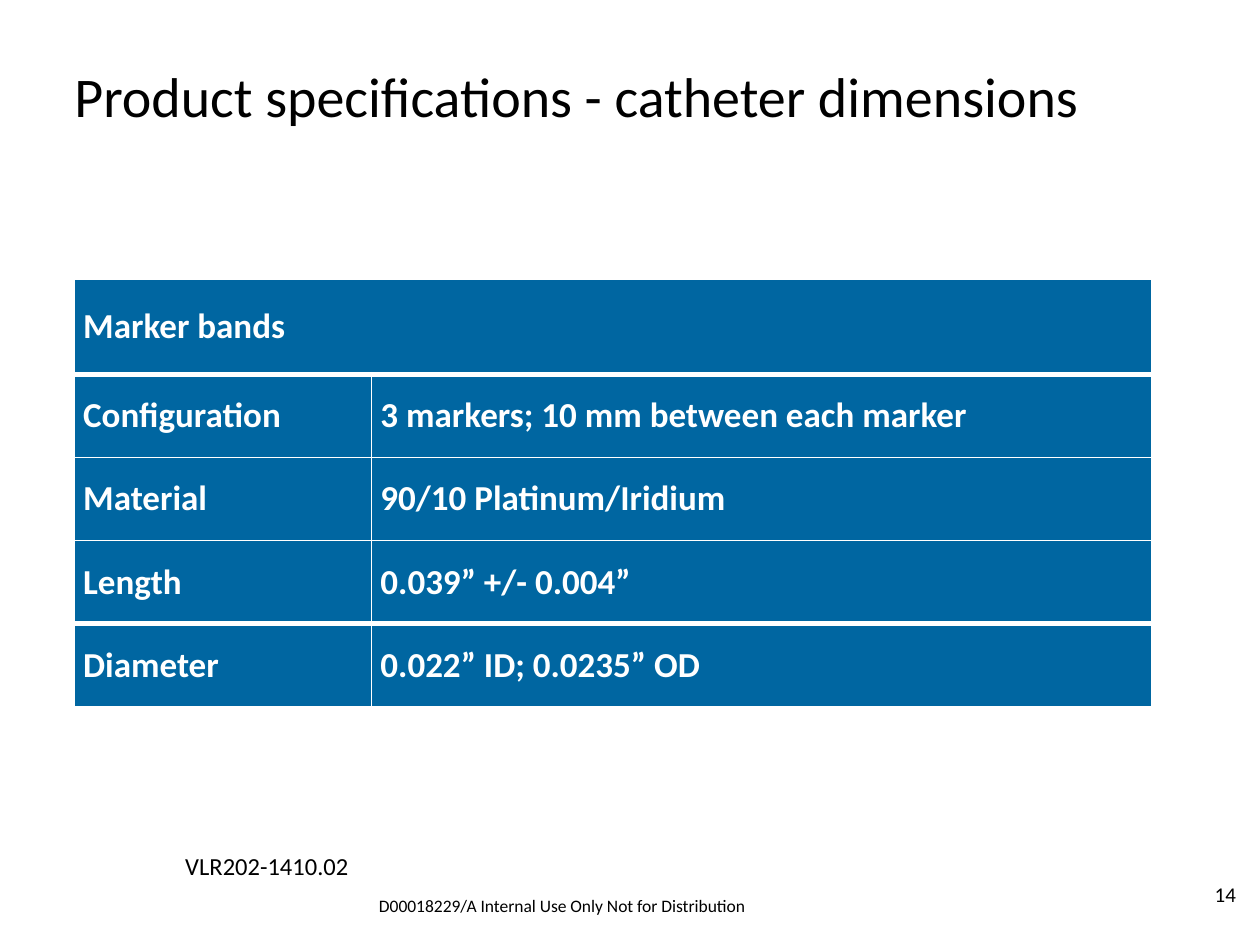
from lxml.etree import SubElement
from pptx import Presentation
from pptx.dml.color import RGBColor
from pptx.enum.text import MSO_ANCHOR, PP_ALIGN
from pptx.oxml.ns import qn
from pptx.util import Inches, Pt

TITLE = "Product specifications - catheter dimensions"
HEADING = "Marker bands"
SPECIFICATIONS = [
    ("Configuration", "3 markers; 10 mm between each marker"),
    ("Material", "90/10 Platinum/Iridium"),
    ("Length", "0.039” +/- 0.004”"),
    ("Diameter", "0.022” ID; 0.0235” OD"),
]
FOOTERS = [
    ("14", (9.64, 7, 0.29, 0.22), 12, PP_ALIGN.LEFT),
    ("VLR202-1410.02", (1.47, 6.75, 5.88, 0.35), 14, PP_ALIGN.LEFT),
    ("D00018229/A Internal Use Only Not for Distribution",
     (2.7, 7.1, 3.52, 0.16), 10, PP_ALIGN.CENTER),
]
BLACK, WHITE, BLUE = "000000", "FFFFFF", "0066A1"
MARGIN = 0.59
COLUMN_WIDTHS = (2.36, 6.19)
HEADING_HEIGHT, ROW_HEIGHT = 0.75, 0.66
THIN, THICK = 1, 3


def color(value):
    """Turn a hex string into a colour."""
    return RGBColor.from_string(value)


def write(frame, text, size, ink, align=PP_ALIGN.LEFT, bold=False):
    """Put one formatted paragraph in a text frame."""
    frame.text = text
    paragraph = frame.paragraphs[0]
    paragraph.alignment = align
    font = paragraph.font
    font.name, font.size, font.bold = "Calibri", Pt(size), bold
    font.color.rgb = color(ink)


def fit(frame):
    """Remove the insets, wrap the text and start it at the top."""
    frame.margin_left = frame.margin_right = frame.margin_top = frame.margin_bottom = 0
    frame.word_wrap = True
    frame.vertical_anchor = MSO_ANCHOR.TOP


def border(cell, top, bottom):
    """Draw white lines on the four sides of a cell."""
    properties = cell._tc.get_or_add_tcPr()
    sides = {"L": THIN, "R": THIN, "T": top, "B": bottom}
    for position, (side, width) in enumerate(sides.items()):
        line = SubElement(properties, qn(f"a:ln{side}"), w=str(Pt(width)))
        SubElement(SubElement(line, qn("a:solidFill")), qn("a:srgbClr"), val=WHITE)
        properties.insert(position, line)


def add_specifications(slide):
    """Build the table of marker band specifications."""
    rows = [(HEADING, "")] + SPECIFICATIONS
    heights = [HEADING_HEIGHT] + [ROW_HEIGHT] * len(SPECIFICATIONS)
    table = slide.shapes.add_table(
        len(rows), len(COLUMN_WIDTHS), Inches(MARGIN), Inches(2.22),
        Inches(sum(COLUMN_WIDTHS)), Inches(sum(heights))).table
    for column, width in zip(table.columns, COLUMN_WIDTHS):
        column.width = Inches(width)
    edges = [THIN, THICK] + [THIN] * (len(rows) - 3) + [THICK, THIN]
    for row, (texts, height) in enumerate(zip(rows, heights)):
        table.rows[row].height = Inches(height)
        for column, text in enumerate(texts):
            cell = table.cell(row, column)
            cell.margin_left = cell.margin_right = Inches(0.07)
            cell.margin_top = cell.margin_bottom = 0
            cell.vertical_anchor = MSO_ANCHOR.MIDDLE
            cell.fill.solid()
            cell.fill.fore_color.rgb = color(BLUE)
            border(cell, edges[row], edges[row + 1])
            align = PP_ALIGN.JUSTIFY if column else PP_ALIGN.LEFT
            write(cell.text_frame, text, 20, WHITE, align, bold=True)
    table.cell(0, 0).merge(table.cell(0, 1))


def main():
    """Build and save the slide."""
    deck = Presentation()
    deck.slide_width, deck.slide_height = Inches(10), Inches(7.5)
    slide = deck.slides.add_slide(deck.slide_layouts[5])
    title = slide.shapes.title
    title.left, title.top = Inches(MARGIN), Inches(0.49)
    title.width, title.height = Inches(10 - 2 * MARGIN), Inches(1.1)
    fit(title.text_frame)
    write(title.text_frame, TITLE, 32, BLACK)
    add_specifications(slide)
    for text, place, size, align in FOOTERS:
        frame = slide.shapes.add_textbox(*map(Inches, place)).text_frame
        fit(frame)
        write(frame, text, size, BLACK, align)
    deck.save("out.pptx")


if __name__ == "__main__":
    main()
